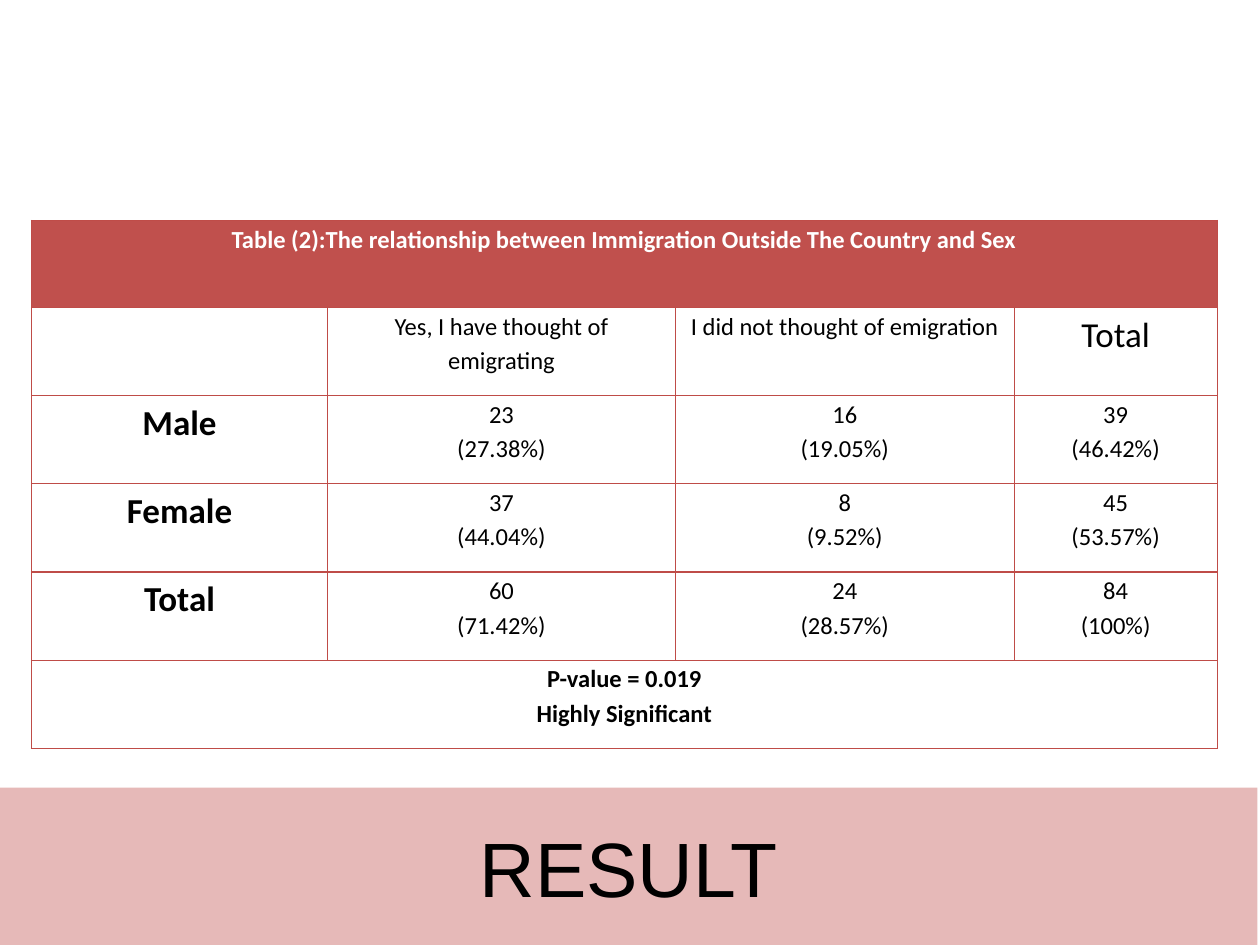
from lxml import etree
from pptx import Presentation
from pptx.dml.color import RGBColor
from pptx.enum.text import MSO_ANCHOR, PP_ALIGN
from pptx.oxml import parse_xml
from pptx.oxml.ns import nsdecls
from pptx.util import Inches, Pt


def color(code):
    return RGBColor.from_string(code)


def border(cell, code, width):
    """Draw all four sides of a cell; call before the fill is set."""
    props = cell._tc.get_or_add_tcPr()
    for side in "LRTB":
        props.append(parse_xml(
            f'<a:ln{side} {nsdecls("a")} w="{Pt(width)}"><a:solidFill>'
            f'<a:srgbClr val="{code}"/></a:solidFill></a:ln{side}>'))


prs = Presentation()
prs.slide_width, prs.slide_height = Inches(10), Inches(7.5)
slide = prs.slides.add_slide(prs.slide_layouts[5])

# Title band
title = slide.shapes.title
title.left, title.top = Inches(0), Inches(6.25)
title.width, title.height = Inches(9.98), Inches(1.25)
title.fill.solid()
title.fill.fore_color.rgb = color("E6B9B8")
frame = title.text_frame
frame.text = "RESULT"
frame.vertical_anchor = MSO_ANCHOR.MIDDLE
para = frame.paragraphs[0]
para.alignment = PP_ALIGN.CENTER
font = para.runs[0].font
font.name, font.size = "Arial", Pt(44)
font.color.rgb = color("000000")

# Table
rows = [
    ["Table (2):The relationship between Immigration Outside The Country and Sex", "", "", ""],
    ["", "Yes, I have thought of emigrating", "I did not thought of emigration", "Total"],
    ["Male", "23\n(27.38%)", "16\n(19.05%)", "39\n(46.42%)"],
    ["Female", "37\n(44.04%)", "8\n(9.52%)", "45\n(53.57%)"],
    ["Total", "60\n(71.42%)", "24\n(28.57%)", "84\n(100%)"],
    ["P-value = 0.019\nHighly Significant", "", "", ""],
]
widths = [2.35, 2.76, 2.69, 1.61]
last = len(rows) - 1
table = slide.shapes.add_table(
    len(rows), len(widths), Inches(0.25), Inches(1.75), Inches(9.42), Inches(4.21)).table
for col, width in zip(table.columns, widths):
    col.width = Inches(width)
for row in table.rows:
    row.height = Inches(0.7)
table.rows[0].height = Inches(0.69)

for r, texts in enumerate(rows):
    for c, text in enumerate(texts):
        cell = table.cell(r, c)
        border(cell, "BF4C48", 0.75)
        cell.fill.solid()
        cell.fill.fore_color.rgb = color("C0504D" if r == 0 else "FFFFFF")
        cell.margin_left = cell.margin_right = Inches(0.1)
        cell.margin_top = cell.margin_bottom = 0
        cell.text_frame.text = text
        large = text == "Total" or (c == 0 and 1 < r < last)
        for para in cell.text_frame.paragraphs:
            para.alignment = PP_ALIGN.CENTER
            para.line_spacing = 1.15
            if r == 0:
                para.space_before = Pt(12)
            for run in para.runs:
                run.font.name = "Calibri"
                run.font.size = Pt(20 if large else 14)
                run.font.bold = c == 0
                run.font.color.rgb = color("FFFFFF" if r == 0 else "000000")

for r in (0, last):
    table.cell(r, 0).merge(table.cell(r, len(widths) - 1))

prs.save("out.pptx")
